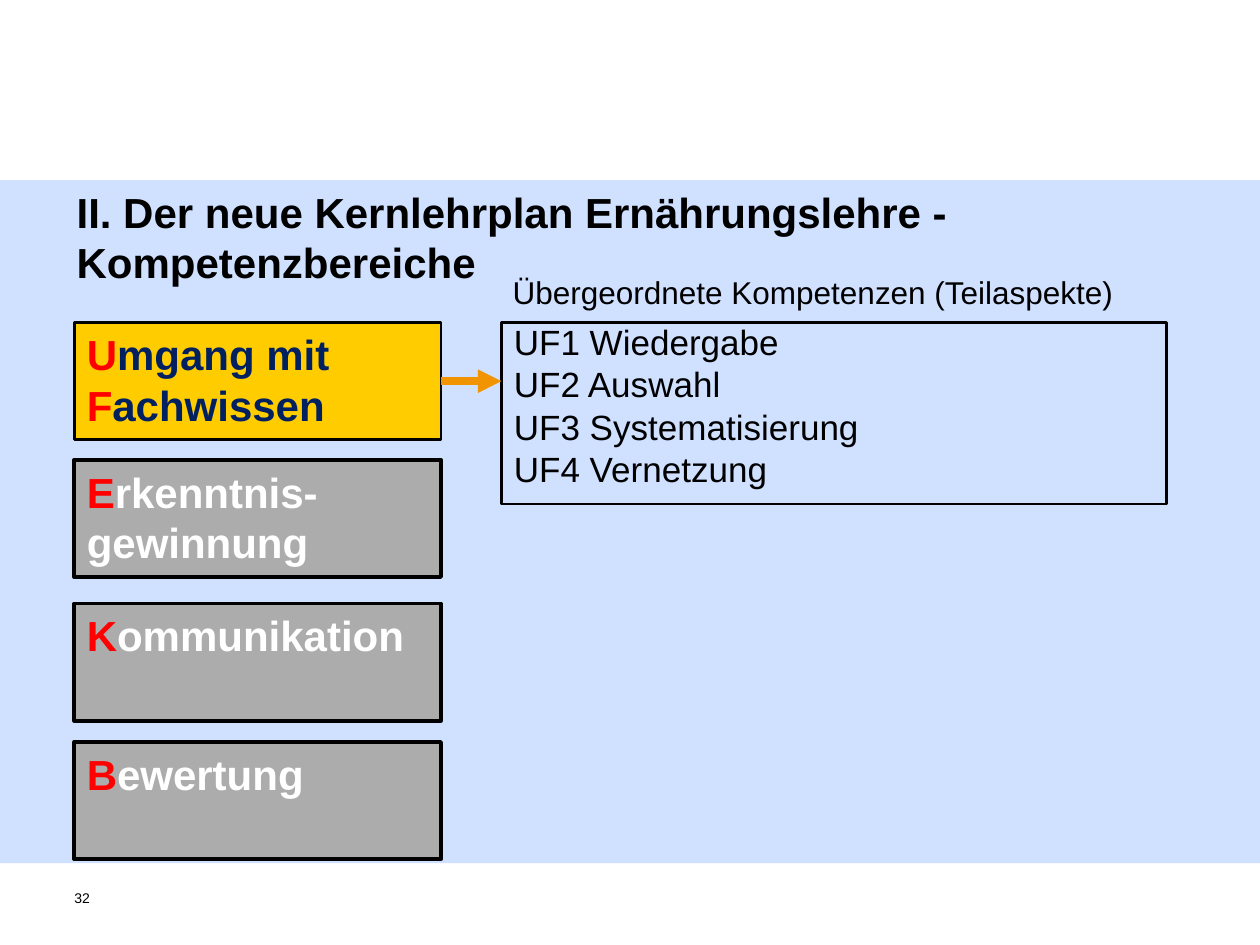
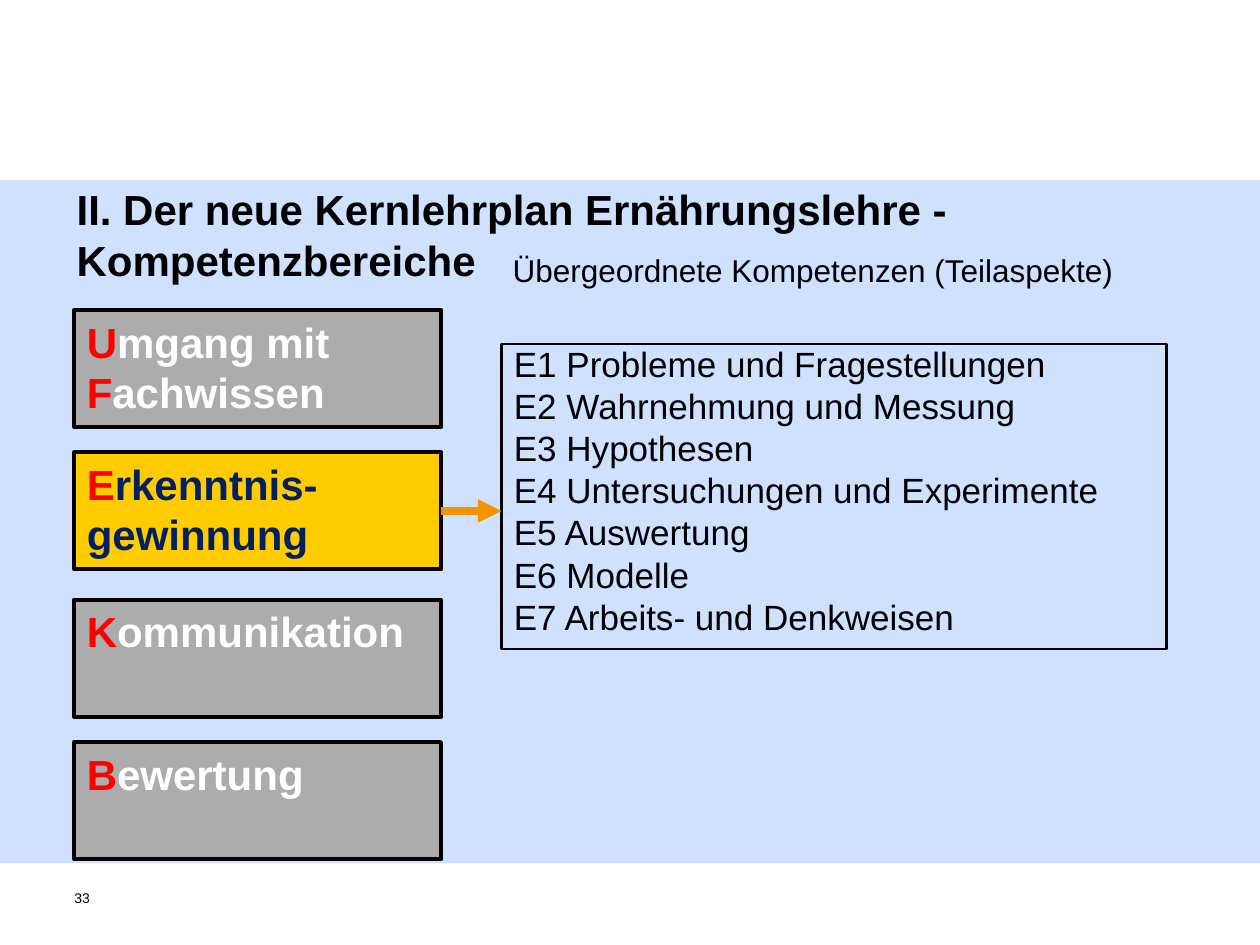
"""Build two slides on the competence areas of the curriculum."""
from dataclasses import dataclass

from lxml import etree
from pptx import Presentation
from pptx.dml.color import RGBColor
from pptx.enum.shapes import MSO_CONNECTOR, MSO_SHAPE
from pptx.enum.text import MSO_ANCHOR, PP_ALIGN
from pptx.oxml.ns import qn
from pptx.util import Inches, Pt

RECTANGLE = MSO_SHAPE.RECTANGLE
STRAIGHT = MSO_CONNECTOR.STRAIGHT
TOP = MSO_ANCHOR.TOP
LEFT = PP_ALIGN.LEFT
RIGHT_SIDE = 3


@dataclass(frozen=True)
class Theme:
    font: str = "Arial"
    black: str = "000000"
    white: str = "FFFFFF"
    band: str = "6699FF"
    band_opacity: int = 30
    active_fill: str = "FFCC00"
    active_text: str = "002060"
    idle_fill: str = "ACACAC"
    initial: str = "FF0000"
    arrow: str = "F29400"
    heading_size: int = 24
    list_size: int = 20
    caption_size: int = 18
    number_size: int = 8


THEME = Theme()
TITLE = "II. Der neue Kernlehrplan Ernährungslehre - Kompetenzbereiche"
CAPTION = "Übergeordnete Kompetenzen (Teilaspekte)"
AREA_LEFT, AREA_WIDTH, AREA_HEIGHT = 0.59, 2.91, 0.93
LIST_LEFT, LIST_WIDTH = 3.98, 5.28
AREAS = [
    [("U", "mgang mit "), ("F", "achwissen")],
    [("E", "rkenntnis-gewinnung")],
    [("K", "ommunikation")],
    [("B", "ewertung")],
]
PAGES = [
    {
        "number": "32", "active": 0, "title_top": 1.43, "caption_top": 2.12,
        "area_tops": [2.56, 3.65, 4.79, 5.89], "area_lines": [1.5, 2.25, 2.25, 2.25],
        "list_top": 2.56, "list_height": 1.44,
        "aspects": ["UF1 Wiedergabe", "UF2 Auswahl", "UF3 Systematisierung", "UF4 Vernetzung"],
    },
    {
        "number": "33", "active": 1, "title_top": 1.41, "caption_top": 1.94,
        "area_tops": [2.46, 3.59, 4.76, 5.89], "area_lines": [2.25] * 4,
        "list_top": 2.73, "list_height": 2.42,
        "aspects": [
            "E1 Probleme und Fragestellungen", "E2 Wahrnehmung und Messung",
            "E3 Hypothesen", "E4 Untersuchungen und Experimente", "E5 Auswertung",
            "E6 Modelle", "E7 Arbeits- und Denkweisen",
        ],
    },
]


def add_box(page, left, top, width, height, fill=None, line_width=None):
    box = page.shapes.add_shape(RECTANGLE, Inches(left), Inches(top), Inches(width), Inches(height))
    box.shadow.inherit = False
    if fill:
        box.fill.solid()
        box.fill.fore_color.rgb = RGBColor.from_string(fill)
    else:
        box.fill.background()
    if line_width:
        box.line.color.rgb = RGBColor.from_string(THEME.black)
        box.line.width = Pt(line_width)
    else:
        box.line.fill.background()
    box.text_frame.word_wrap = True
    box.text_frame.vertical_anchor = TOP
    box.text_frame.paragraphs[0].alignment = LEFT
    return box


def add_span(para, text, size, color=THEME.black, bold=False):
    span = para.add_run()
    span.text = text
    span.font.name = THEME.font
    span.font.size = Pt(size)
    span.font.bold = bold
    span.font.color.rgb = RGBColor.from_string(color)


deck = Presentation()
deck.slide_width, deck.slide_height = Inches(10), Inches(7.5)

for content in PAGES:
    page = deck.slides.add_slide(deck.slide_layouts[6])

    band = add_box(page, 0, 1.43, 10, 5.42, THEME.band)
    band_color = band.fill._xPr.find(qn("a:solidFill"))[0]
    etree.SubElement(band_color, qn("a:alpha")).set("val", str(THEME.band_opacity * 1000))

    labels = [
        (0.51, content["title_top"], 9.08, 0.71, TITLE, THEME.heading_size, True),
        (3.97, content["caption_top"], 5.01, 0.4, CAPTION, THEME.caption_size, False),
        (0.59, 7.06, 0.32, 0.37, content["number"], THEME.number_size, False),
    ]
    for left, top, width, height, text, size, bold in labels:
        label = page.shapes.add_textbox(Inches(left), Inches(top), Inches(width), Inches(height))
        frame = label.text_frame
        frame.word_wrap = True
        if text == content["number"]:
            frame.margin_left = frame.margin_right = frame.margin_top = frame.margin_bottom = 0
        add_span(frame.paragraphs[0], text, size, bold=bold)

    aspect_box = add_box(page, LIST_LEFT, content["list_top"], LIST_WIDTH, content["list_height"],
                         line_width=1.5)
    frame = aspect_box.text_frame
    for index, aspect in enumerate(content["aspects"]):
        para = frame.add_paragraph() if index else frame.paragraphs[0]
        para.alignment = LEFT
        para.line_spacing = 0.8
        if index:
            para.space_before = Pt(4.9)
        add_span(para, aspect, THEME.list_size)

    area_boxes = []
    for index, parts in enumerate(AREAS):
        active = index == content["active"]
        fill = THEME.active_fill if active else THEME.idle_fill
        color = THEME.active_text if active else THEME.white
        box = add_box(page, AREA_LEFT, content["area_tops"][index], AREA_WIDTH, AREA_HEIGHT,
                      fill, content["area_lines"][index])
        para = box.text_frame.paragraphs[0]
        for initial, rest in parts:
            add_span(para, initial, THEME.heading_size, THEME.initial, True)
            add_span(para, rest, THEME.heading_size, color, True)
        area_boxes.append(box)

    source = area_boxes[content["active"]]
    middle = source.top + source.height // 2
    arrow = page.shapes.add_connector(STRAIGHT, source.left + source.width, middle,
                                      Inches(LIST_LEFT), middle)
    arrow.begin_connect(source, RIGHT_SIDE)
    arrow.line.color.rgb = RGBColor.from_string(THEME.arrow)
    arrow.line.width = Pt(4.5)
    etree.SubElement(arrow.line._get_or_add_ln(), qn("a:tailEnd")).set("type", "triangle")
    etree.SubElement(arrow._element.spPr, qn("a:effectLst"))

deck.save("out.pptx")
